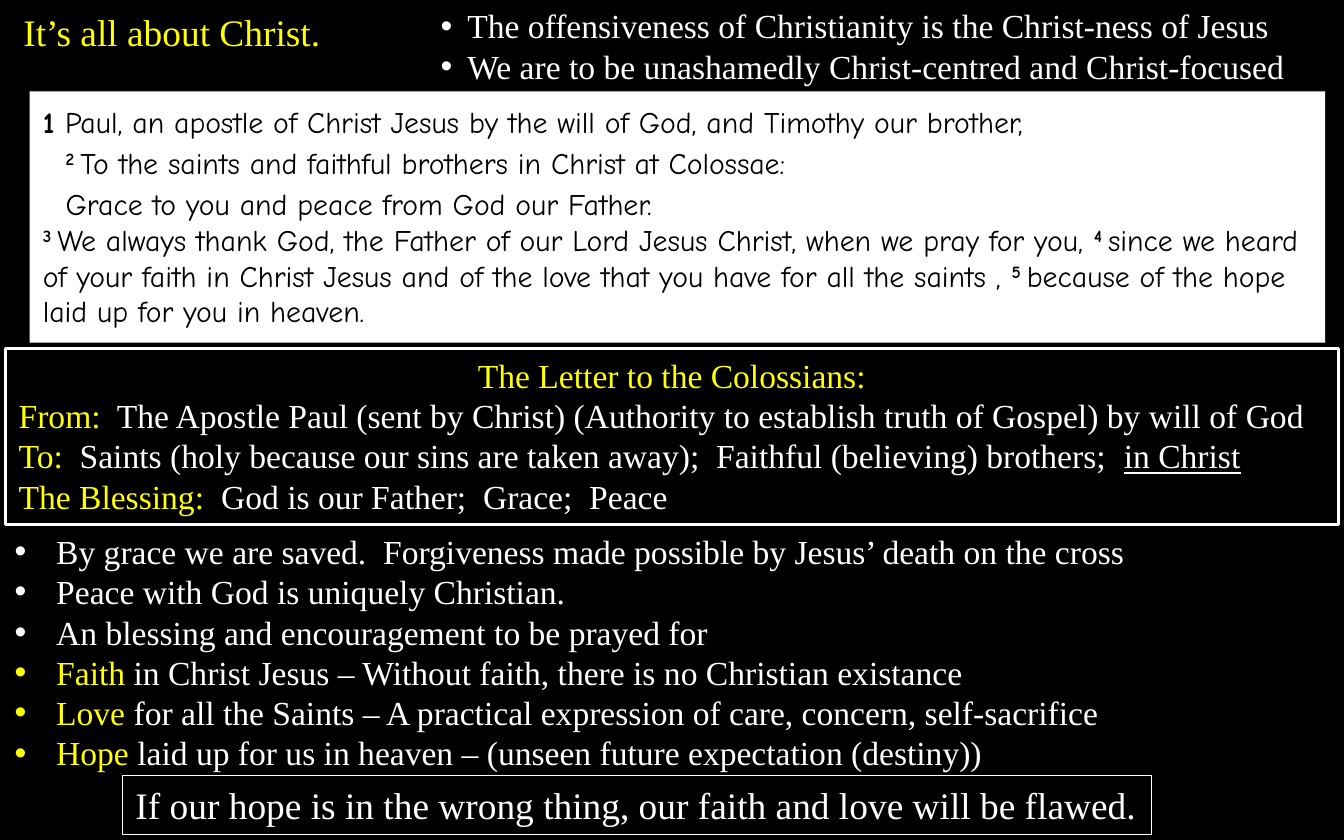
import pptx
import pptx.util
import pptx.dml.color
import pptx.enum.shapes
import pptx.enum.text
import lxml.etree

WIDE, HIGH = 10, 6.25
WHITE, GOLD, BLACK = "FFFFFF", "FFFF00", "000000"
SERIF, HAND = "Times New Roman", "Comic Neue"
ALIGN = pptx.enum.text.PP_ALIGN


def color(code):
    return pptx.dml.color.RGBColor.from_string(code)


def panel(slide, area, fill=None, line=None):
    """Add a text frame; area is left, top, width, height in percent of the slide."""
    sides = (WIDE, HIGH, WIDE, HIGH)
    place = [pptx.util.Inches(part * side / 100) for part, side in zip(area, sides)]
    if fill or line:
        shape = slide.shapes.add_shape(pptx.enum.shapes.MSO_SHAPE.RECTANGLE, *place)
        shape.shadow.inherit = False
        if fill:
            shape.fill.solid()
            shape.fill.fore_color.rgb = color(fill)
        else:
            shape.fill.background()
        if line:
            shape.line.color.rgb = color(WHITE)
            shape.line.width = pptx.util.Pt(line)
        else:
            shape.line.fill.background()
    else:
        shape = slide.shapes.add_textbox(*place)
    frame = shape.text_frame
    frame.word_wrap = True
    frame.auto_size = pptx.enum.text.MSO_AUTO_SIZE.SHAPE_TO_FIT_TEXT
    frame.vertical_anchor = pptx.enum.text.MSO_ANCHOR.TOP
    return frame


def indent(para, left, first, bullet=False):
    """Set left and first-line indents in inches, with a round bullet if asked."""
    props = para._p.get_or_add_pPr()
    props.set("marL", str(pptx.util.Inches(left)))
    props.set("indent", str(pptx.util.Inches(first)))
    if bullet:
        space = pptx.oxml.ns.nsuri("a")
        lxml.etree.SubElement(props, f"{{{space}}}buFont", typeface="Arial")
        lxml.etree.SubElement(props, f"{{{space}}}buChar", char="•")


def write(frame, runs, size=18, face=SERIF, align=ALIGN.LEFT, hang=None,
          bullet=False, space=None):
    """Add a paragraph of (text, colour, style) runs; style is "", "u", "b" or "sup"."""
    para = frame.paragraphs[0]
    if para.runs:
        para = frame.add_paragraph()
    if hang:
        indent(para, *hang, bullet)
    para.alignment = align
    if space:
        para.line_spacing = space
    base = runs[0][1]
    para.font.name = face
    para.font.size = pptx.util.Pt(size)
    para.font.color.rgb = color(base)
    for text, tone, style in runs:
        run = para.add_run()
        run.text = text
        if tone != base:
            run.font.color.rgb = color(tone)
        if style == "u":
            run.font.underline = True
        if style in ("b", "sup"):
            run.font.bold = True
        if style == "sup":
            run._r.get_or_add_rPr().set("baseline", "30000")


def label(head, rest):
    return [(head, GOLD, ""), (rest, WHITE, "")]


def plain(text, tone=WHITE):
    return [(text, tone, "")]


def verse(*pairs):
    """Turn (number, text) pairs into runs with raised numbers."""
    runs = []
    for number, text in pairs:
        runs += [(number + " ", BLACK, "sup"), (text, BLACK, "")]
    return runs


def opening(slide):
    title = panel(slide, (0, 0.32, 25.6, 7.04))
    write(title, plain("It’s all about Christ.", GOLD), 20, align=ALIGN.CENTER,
          hang=(0.35, -0.35))
    points = panel(slide, (31.8, -0.16, 66.6, 11.36))
    for text in ("The offensiveness of Christianity is the Christ-ness of Jesus",
                 "We are to be unashamedly Christ-centred and Christ-focused"):
        write(points, plain(text), hang=(0.2, -0.2), bullet=True)


def letter(slide):
    frame = panel(slide, (0.4, 41.44, 99.2, 20.96), line=1.5)
    write(frame, plain("The Letter to the Colossians:", GOLD), align=ALIGN.CENTER)
    for runs in (
        label("From:", "  The Apostle Paul (sent by Christ) "
              "(Authority to establish truth of Gospel) by will of God"),
        label("To:", "  Saints (holy because our sins are taken away);  "
              "Faithful (believing) brothers;  ") + [("in Christ", WHITE, "u")],
        label("The Blessing:", "  God is our Father;  Grace;  Peace"),
    ):
        write(frame, runs)


def reading(slide):
    frame = panel(slide, (2.2, 10.88, 96.4, 29.92), fill=WHITE)
    first = [("1 ", BLACK, "b"),
             ("Paul, an apostle of Christ Jesus by the will of God, "
              "and Timothy our brother,", BLACK, "")]
    write(frame, first, 16, HAND, space=1.15)
    for runs in (
        verse(("2", "To the saints and faithful brothers in Christ at Colossae:")),
        plain("Grace to you and peace from God our Father.", BLACK),
    ):
        write(frame, runs, 16, HAND, hang=(0, 0.17), space=1.15)
    write(frame, verse(
        ("3", "We always thank God, the Father of our Lord Jesus Christ, "
              "when we pray for you, "),
        ("4", "since we heard of your faith in Christ Jesus and of the love "
              "that you have for all the saints , "),
        ("5", "because of the hope laid up for you in heaven."),
    ), 16, HAND)


def notes(slide):
    frame = panel(slide, (0.1, 62.4, 99.8, 30.72))
    for runs in (
        plain("By grace we are saved.  Forgiveness made possible by "
              "Jesus’ death on the cross"),
        plain("Peace with God is uniquely Christian."),
        plain("An blessing and encouragement to be prayed for"),
        label("Faith", " in Christ Jesus – Without faith, there is no "
              "Christian existance"),
        label("Love", " for all the Saints – A practical expression of care, "
              "concern, self-sacrifice"),
        label("Hope", " laid up for us in heaven – (unseen future expectation "
              "(destiny))"),
    ):
        write(frame, runs, hang=(0.31, -0.31), bullet=True)


def closing(slide):
    frame = panel(slide, (9.1, 92.32, 76.6, 7.04), line=0.75)
    write(frame, plain("If our hope is in the wrong thing, our faith and love "
                       "will be flawed."), 20, hang=(0.35, -0.35))


def main():
    deck = pptx.Presentation()
    deck.slide_width = pptx.util.Inches(WIDE)
    deck.slide_height = pptx.util.Inches(HIGH)
    slide = deck.slides.add_slide(deck.slide_layouts[6])
    back = slide.background.fill
    back.solid()
    back.fore_color.rgb = color(BLACK)
    for build in (opening, letter, reading, notes, closing):
        build(slide)
    deck.save("out.pptx")


if __name__ == "__main__":
    main()
